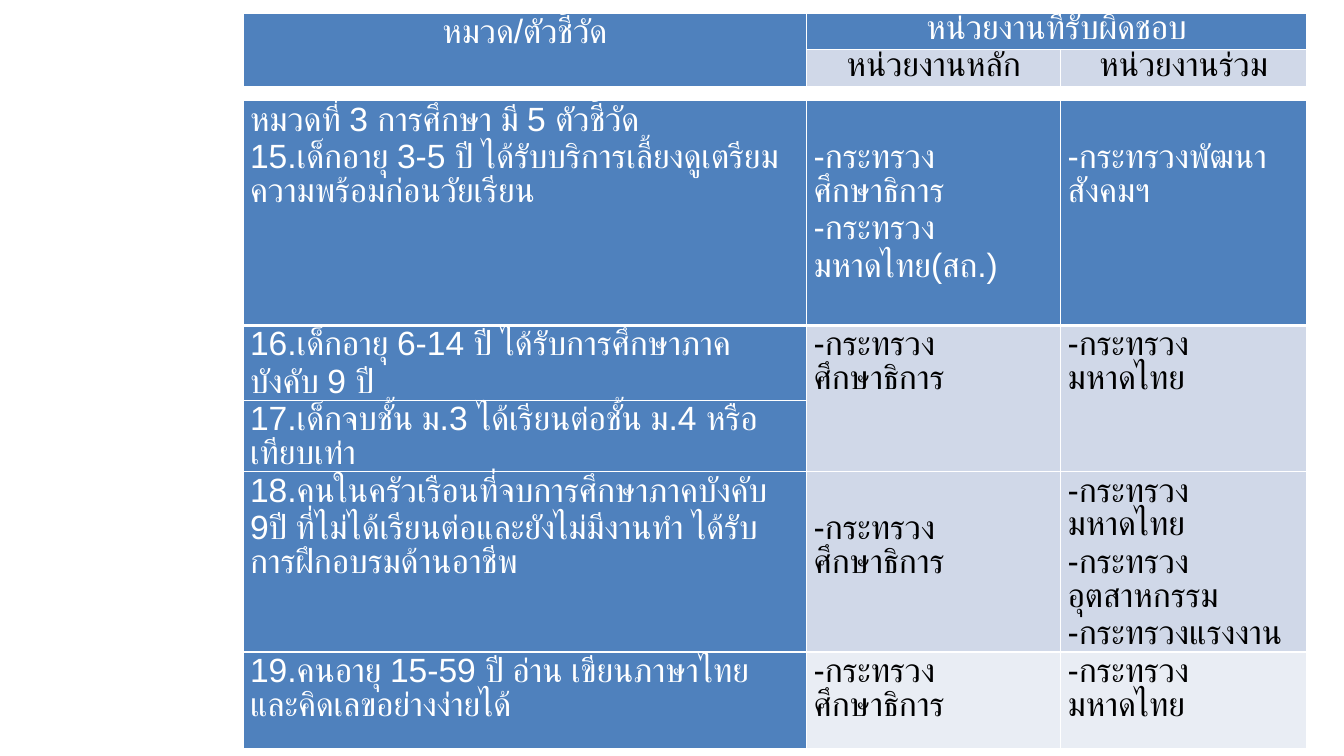
"""Build a slide listing education indicators and the agencies responsible for them."""
from lxml.etree import SubElement
from pptx import Presentation
from pptx.dml.color import RGBColor
from pptx.enum.text import PP_ALIGN
from pptx.oxml.ns import qn
from pptx.util import Inches, Pt

COLOURS = {"blue": "4F81BD", "tint": "D0D8E8", "pale": "E9EDF4", "white": "FFFFFF", "black": "000000"}
COLUMNS = [5.59, 2.52, 2.44]
LEFT = 2.41
LINE = 0.37
EDUCATION = "-กระทรวงศึกษาธิการ"
INTERIOR = "-กระทรวงมหาดไทย"

deck = Presentation()
deck.slide_width, deck.slide_height = Inches(13.33), Inches(7.5)
page = deck.slides.add_slide(deck.slide_layouts[6])


def add_grid(top, heights):
    frame = page.shapes.add_table(len(heights), len(COLUMNS), Inches(LEFT), Inches(top),
                                  Inches(sum(COLUMNS)), Inches(sum(heights)))
    table = frame.table
    for column, width in zip(table.columns, COLUMNS):
        column.width = Inches(width)
    for row, height in zip(table.rows, heights):
        row.height = Inches(height)
    return table


def write_cell(cell, text, fill="blue", align=PP_ALIGN.LEFT, skip=0, bottom=1):
    cell.margin_left = cell.margin_right = Inches(0.07)
    cell.margin_top, cell.margin_bottom = Inches(skip * LINE), 0
    cell.text = text
    for para in cell.text_frame.paragraphs:
        para.alignment = align
        for span in para.runs:
            span.font.name, span.font.size, span.font.bold = "Arial", Pt(24), False
            ink = "white" if fill == "blue" else "black"
            span.font.color.rgb = RGBColor.from_string(COLOURS[ink])
    properties = cell._tc.get_or_add_tcPr()
    for side, width in {"L": 1, "R": 1, "T": 1, "B": bottom}.items():
        edge = SubElement(properties, qn(f"a:ln{side}"), w=str(Pt(width)))
        SubElement(SubElement(edge, qn("a:solidFill")), qn("a:srgbClr"), val=COLOURS["white"])
    cell.fill.solid()
    cell.fill.fore_color.rgb = RGBColor.from_string(COLOURS[fill])


header = add_grid(0.13, [0.36, 0.36])
header.cell(0, 0).merge(header.cell(1, 0))
header.cell(0, 1).merge(header.cell(0, 2))
for row, column, text, fill in [
    (0, 0, "หมวด/ตัวชี้วัด", "blue"),
    (0, 1, "หน่วยงานที่รับผิดชอบ", "blue"),
    (1, 1, "หน่วยงานหลัก", "tint"),
    (1, 2, "หน่วยงานร่วม", "tint"),
]:
    write_cell(header.cell(row, column), text, fill=fill, align=PP_ALIGN.CENTER)

body = add_grid(1, [2.23, 0.74, 0.7, 1.79, 0.96])
for column in (1, 2):
    body.cell(1, column).merge(body.cell(2, column))

indicators = [
    "หมวดที่ 3 การศึกษา มี 5 ตัวชี้วัด\n15.เด็กอายุ 3-5 ปี ได้รับบริการเลี้ยงดูเตรียมความพร้อมก่อนวัยเรียน",
    "16.เด็กอายุ 6-14 ปี ได้รับการศึกษาภาคบังคับ 9 ปี",
    "17.เด็กจบชั้น ม.3 ได้เรียนต่อชั้น ม.4 หรือเทียบเท่า",
    "18.คนในครัวเรือนที่จบการศึกษาภาคบังคับ 9ปี ที่ไม่ได้เรียนต่อและยังไม่มีงานทำ ได้รับการฝึกอบรมด้านอาชีพ",
    "19.คนอายุ 15-59 ปี อ่าน เขียนภาษาไทย และคิดเลขอย่างง่ายได้",
]
for row, text in enumerate(indicators):
    write_cell(body.cell(row, 0), text, bottom=1 if row else 3)

for row, column, text, fill, skip in [
    (0, 1, f"{EDUCATION}\n{INTERIOR}(สถ.)", "blue", 1),
    (0, 2, "-กระทรวงพัฒนาสังคมฯ", "blue", 1),
    (1, 1, EDUCATION, "tint", 0),
    (1, 2, INTERIOR, "tint", 0),
    (3, 1, EDUCATION, "tint", 1),
    (3, 2, f"{INTERIOR}\n-กระทรวงอุตสาหกรรม\n-กระทรวงแรงงาน", "tint", 0),
    (4, 1, EDUCATION, "pale", 0),
    (4, 2, INTERIOR, "pale", 0),
]:
    write_cell(body.cell(row, column), text, fill=fill, skip=skip, bottom=1 if row else 3)

deck.save("out.pptx")
